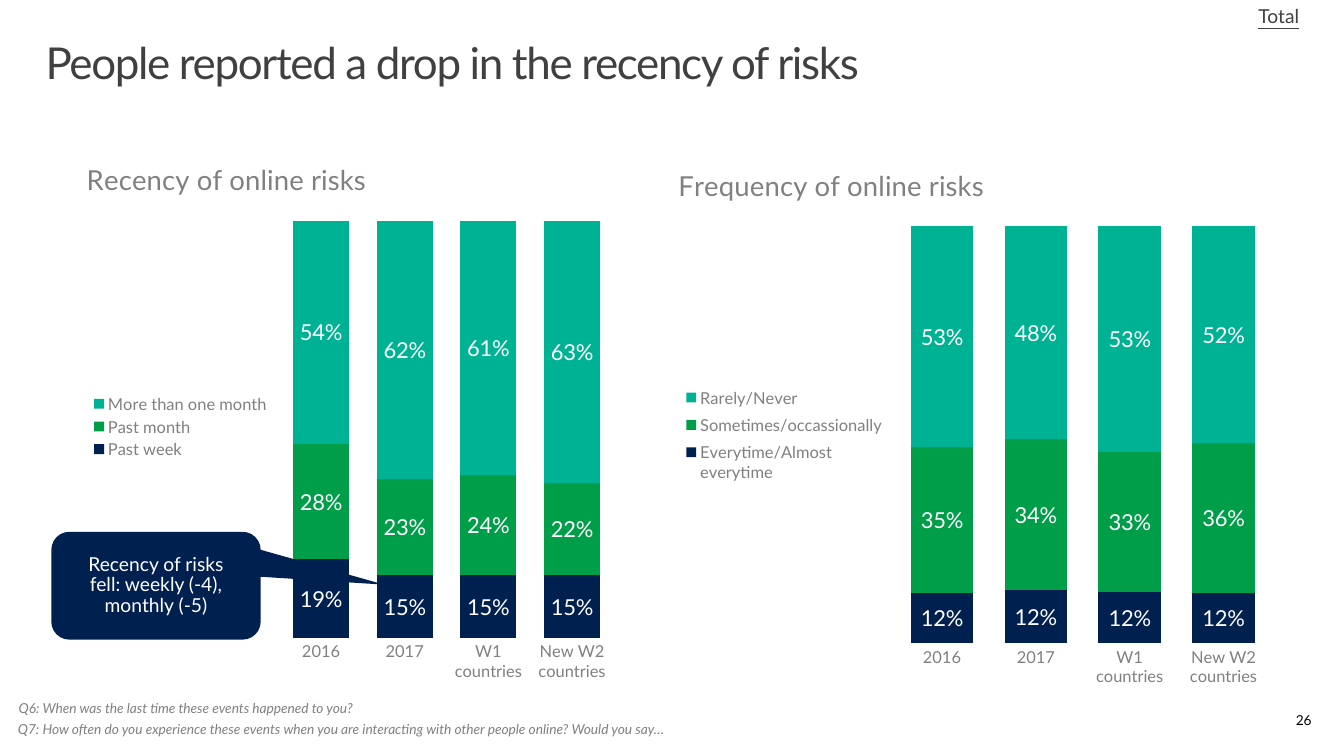
import pptx
import pptx.chart.data
import pptx.dml.color
import pptx.enum.chart
import pptx.enum.shapes
import pptx.enum.text
import pptx.oxml
import pptx.oxml.ns
import pptx.util
from pptx.util import Cm

FONT = "Lato"
NAVY, GREEN, TEAL = "002050", "009E49", "00B294"
GRAY, DARK, WHITE, BLACK = "808080", "404040", "FFFFFF", "000000"
CATEGORIES = ["2016", "2017", "W1 countries", "New W2 countries"]
ALIGN = pptx.enum.text.PP_ALIGN
ANCHOR = pptx.enum.text.MSO_ANCHOR


def color(value):
    return pptx.dml.color.RGBColor.from_string(value)


def style_font(font, size, font_color):
    font.name = FONT
    font.size = pptx.util.Pt(size)
    font.color.rgb = color(font_color)


def write_text(shape, text, size, font_color, align=ALIGN.LEFT,
               anchor=ANCHOR.TOP, margins=(0.51, 0.41)):
    """Fill a shape with one paragraph and return that paragraph."""
    frame = shape.text_frame
    frame.word_wrap = True
    frame.vertical_anchor = anchor
    frame.margin_left = frame.margin_right = Cm(margins[0])
    frame.margin_top = frame.margin_bottom = Cm(margins[1])
    frame.text = text
    paragraph = frame.paragraphs[0]
    paragraph.alignment = align
    paragraph.line_spacing = 0.9
    style_font(paragraph.font, size, font_color)
    return paragraph


def add_text(slide, box, text, size, font_color, **options):
    shape = slide.shapes.add_textbox(*map(Cm, box))
    return write_text(shape, text, size, font_color, **options)


def set_title(slide, text):
    title = slide.shapes.title
    title.left, title.top, title.width, title.height = map(
        Cm, (0.76, 0.81, 33.02, 2.54))
    paragraph = write_text(title, text, 32, DARK, margins=(0.41, 0.25))
    paragraph.runs[0].font._element.set("spc", "-100")


def place(element, index, layout, inner=False):
    """Give a chart part a manual layout in fractions of the chart."""
    for old in element.findall(pptx.oxml.ns.qn("c:layout")):
        element.remove(old)
    parts = '<c:layoutTarget val="inner"/>' if inner else ""
    parts += '<c:xMode val="edge"/><c:yMode val="edge"/>'
    for name, value in zip("xywh", layout):
        parts += f'<c:{name} val="{value}"/>'
    element.insert(index, pptx.oxml.parse_xml(
        f'<c:layout {pptx.oxml.ns.nsdecls("c")}>'
        f'<c:manualLayout>{parts}</c:manualLayout></c:layout>'))


def add_stacked_chart(slide, box, title, series_values,
                      title_layout, legend_layout, plot_layout):
    data = pptx.chart.data.CategoryChartData(number_format="0%")
    data.categories = CATEGORIES
    for name, values in series_values.items():
        data.add_series(name, values)
    chart = slide.shapes.add_chart(
        pptx.enum.chart.XL_CHART_TYPE.COLUMN_STACKED_100,
        *map(Cm, box), data).chart
    style_font(chart.font, 10, GRAY)

    # Title and legend
    chart.has_title = True
    chart.chart_title.text_frame.text = title
    title_font = chart.chart_title.text_frame.paragraphs[0].font
    style_font(title_font, 20, GRAY)
    title_font.bold = False
    place(chart.chart_title._element, 1, title_layout)
    chart.has_legend = True
    chart.legend.position = pptx.enum.chart.XL_LEGEND_POSITION.LEFT
    chart.legend.include_in_layout = False
    style_font(chart.legend.font, 12, GRAY)
    place(chart.legend._element, 1, legend_layout)

    # Axes
    category_axis, value_axis = chart.category_axis, chart.value_axis
    category_axis.major_tick_mark = pptx.enum.chart.XL_TICK_MARK.NONE
    category_axis.format.line.color.rgb = color(WHITE)
    style_font(category_axis.tick_labels.font, 12, GRAY)
    value_axis.has_major_gridlines = False
    value_axis.visible = False

    # Columns and their labels
    plot = chart.plots[0]
    plot.gap_width = 50
    plot.overlap = 100
    plot.vary_by_categories = False
    for series, fill in zip(plot.series, (NAVY, GREEN, TEAL)):
        series.format.fill.solid()
        series.format.fill.fore_color.rgb = color(fill)
        labels = series.data_labels
        labels.show_value = True
        labels.position = pptx.enum.chart.XL_LABEL_POSITION.CENTER
        labels.number_format = "0%"
        labels.number_format_is_linked = False
        style_font(labels.font, 16, WHITE)
    place(plot._element.getparent(), 0, plot_layout, inner=True)


def add_callout(slide, box, text):
    callout = slide.shapes.add_shape(
        pptx.enum.shapes.MSO_SHAPE.ROUNDED_RECTANGULAR_CALLOUT,
        *map(Cm, box))
    callout.adjustments[0] = 1.09
    callout.adjustments[1] = -0.01
    callout.shadow.inherit = False
    callout.fill.solid()
    callout.fill.fore_color.rgb = color(NAVY)
    callout.line.fill.background()
    write_text(callout, text, 14, WHITE, align=ALIGN.CENTER,
               anchor=ANCHOR.MIDDLE)


def main():
    presentation = pptx.Presentation()
    presentation.slide_width = Cm(34.54)
    presentation.slide_height = Cm(19.43)
    slide = presentation.slides.add_slide(presentation.slide_layouts[5])

    # Heading
    set_title(slide, "People reported a drop in the recency of risks")
    total = add_text(slide, (31.83, -0.1, 2.08, 1.37), "Total", 14, DARK)
    total.font.underline = True

    # Charts
    add_stacked_chart(
        slide, (1.96, 3.84, 14.1, 14.1), "Recency of online risks",
        {"Past week": (0.19, 0.15, 0.15, 0.15),
         "Past month": (0.28, 0.23, 0.24, 0.22),
         "More than one month": (0.54, 0.62, 0.61, 0.63)},
        title_layout=(0.01, 0.01),
        legend_layout=(0.02, 0.44, 0.34, 0.13),
        plot_layout=(0.37, 0.13, 0.61, 0.76))
    add_stacked_chart(
        slide, (17.15, 3.84, 15.82, 14.1), "Frequency of online risks",
        {"Everytime/Almost everytime": (0.12, 0.12, 0.12, 0.12),
         "Sometimes/occassionally": (0.35, 0.34, 0.33, 0.36),
         "Rarely/Never": (0.53, 0.48, 0.53, 0.52)},
        title_layout=(0.01, 0.02),
        legend_layout=(0.02, 0.42, 0.34, 0.2),
        plot_layout=(0.37, 0.14, 0.61, 0.76))
    add_callout(slide, (1.32, 13.67, 5.38, 2.77),
                "Recency of risks fell: weekly (-4), monthly (-5)")

    # Survey questions and page number
    questions = (
        ((-0.03, 17.83, 10.08, 1.19),
         "Q6: When was the last time these events happened to you?"),
        ((-0.05, 18.39, 18.54, 1.19),
         "Q7: How often do you experience these events when you are "
         "interacting with other people online? Would you say…"))
    for box, question in questions:
        add_text(slide, box, question, 10, GRAY).font.italic = True
    add_text(slide, (25.91, 18.01, 8.05, 1.04), "26", 10, BLACK,
             align=ALIGN.RIGHT, anchor=ANCHOR.MIDDLE, margins=(0.25, 0.13))

    presentation.save("out.pptx")


if __name__ == "__main__":
    main()
